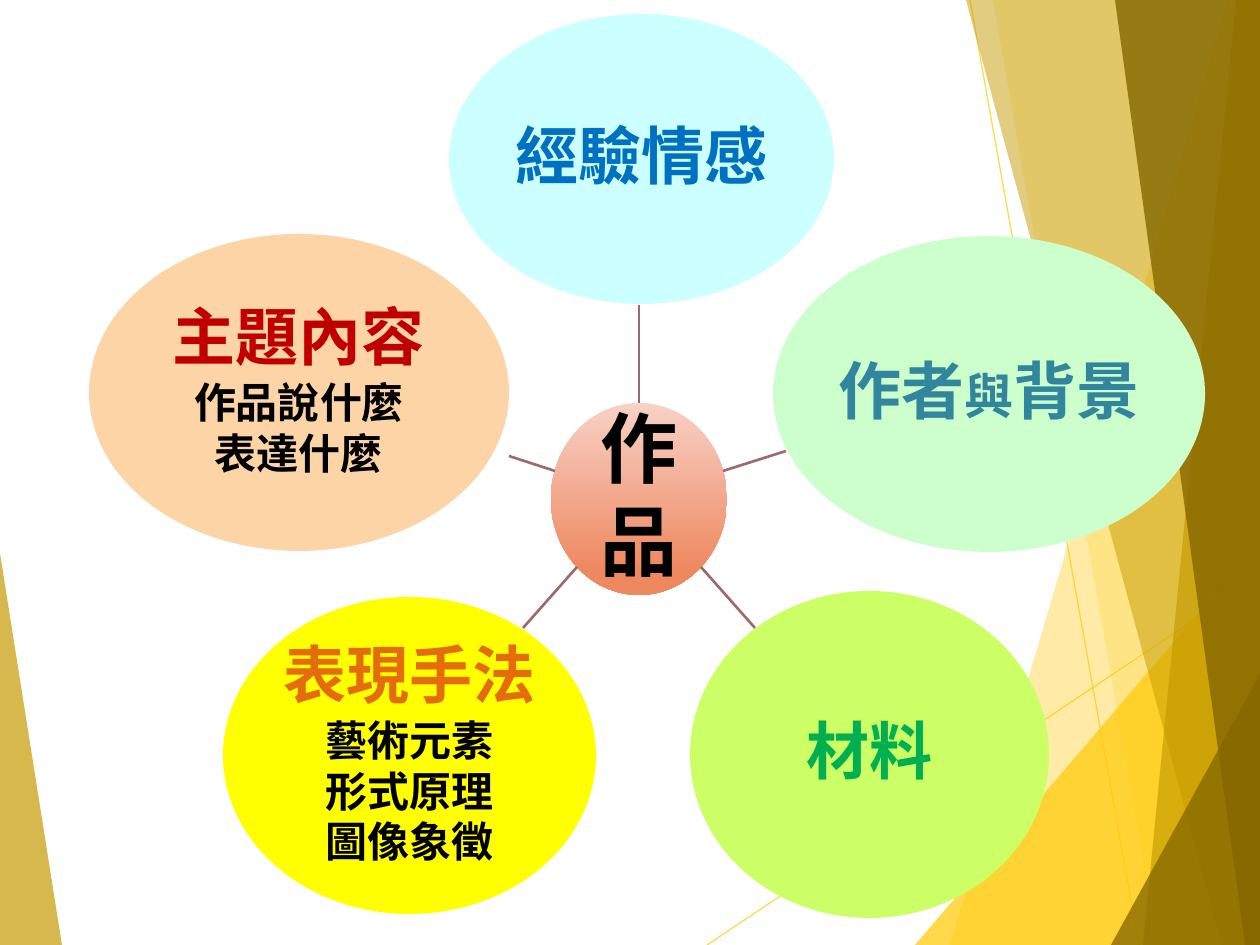
from lxml.etree import SubElement
from pptx import Presentation
from pptx.dml.color import RGBColor
from pptx.enum.shapes import MSO_CONNECTOR, MSO_SHAPE
from pptx.enum.text import MSO_ANCHOR, PP_ALIGN
from pptx.oxml.ns import qn
from pptx.util import Pt

PX = 914400 / 126
WIDTH, HEIGHT = 1260, 945
FONT = "Noto Sans CJK SC"

GOLD = RGBColor(0xFF, 0xCA, 0x08)
OCHRE = RGBColor(0xC5, 0x9B, 0x00)
BROWN = RGBColor(0x84, 0x67, 0x00)
SPOKE = RGBColor(0x9C, 0x6A, 0x6A)
HUB_TOP = RGBColor(0xF8, 0xD1, 0xC6)
HUB_BOTTOM = RGBColor(0xEE, 0x88, 0x5F)
BLACK = RGBColor(0, 0, 0)
CYAN, BLUE = RGBColor(0xCC, 0xFF, 0xFF), RGBColor(0x00, 0x70, 0xC0)
MINT, TEAL = RGBColor(0xCC, 0xFF, 0xCC), RGBColor(0x31, 0x85, 0x9C)
LIME, GREEN = RGBColor(0xCC, 0xFF, 0x66), RGBColor(0x00, 0xB0, 0x50)
YELLOW, ORANGE = RGBColor(0xFF, 0xFF, 0x00), RGBColor(0xE4, 0x6C, 0x0A)
PEACH, RED = RGBColor(0xFC, 0xD4, 0xA5), RGBColor(0xC0, 0x00, 0x00)

# Background facets: outline, colour, opacity in percent
FACETS = [
    ([(1228, 0), (950, 945), (1260, 945), (1260, 0)], GOLD, 36),
    ([(993, 0), (1158, 945), (1260, 945), (1260, 0)], GOLD, 20),
    ([(915, 945), (1260, 541), (1260, 945)], GOLD, 72),
    ([(966, 0), (1222, 945), (1260, 945), (1260, 0)], OCHRE, 50),
    ([(1236, 0), (1143, 945), (1260, 945), (1260, 0)], OCHRE, 66),
    ([(1115, 0), (1245, 945), (1260, 945), (1260, 0)], BROWN, 80),
    ([(1111, 945), (1260, 674), (1260, 945)], BROWN, 76),
    ([(0, 553), (62, 945), (0, 945)], OCHRE, 70),
]
HAIRLINES = [((707, 945), (1260, 576)), ((970, 0), (1139, 945))]

# Topics around the hub: box, fill, heading colour, heading, details
TOPICS = [
    ((449, 14, 385, 290), CYAN, BLUE, [("經驗情感", 36)], []),
    ((773, 236, 432, 316), MINT, TEAL,
     [("作者", 36), ("與", 28), ("背景", 36)], []),
    ((690, 591, 359, 327), LIME, GREEN, [("材料", 36)], []),
    ((223, 597, 373, 317), YELLOW, ORANGE, [("表現手法", 36)],
     ["藝術元素", "形式原理", "圖像象徵"]),
    ((89, 234, 420, 317), PEACH, RED, [("主題內容", 36)],
     ["作品說什麼", "表達什麼"]),
]
SPOKES = [
    ((639, 403), (639, 305)),
    ((723, 471), (786, 451)),
    ((701, 567), (755, 628)),
    ((577, 567), (523, 628)),
    ((555, 471), (509, 456)),
]


def emu(*lengths):
    return [round(length * PX) for length in lengths]


def set_opacity(fill_parent, percent):
    color = fill_parent.find(".//" + qn("a:srgbClr"))
    SubElement(color, qn("a:alpha"), val=str(percent * 1000))


def add_line(page, start, end, color, width):
    line = page.shapes.add_connector(MSO_CONNECTOR.STRAIGHT, *emu(*start, *end))
    line.line.color.rgb = color
    line.line.width = Pt(width)
    SubElement(line._element.spPr, qn("a:effectLst"))
    return line


def add_facet(page, points, color, percent):
    builder = page.shapes.build_freeform(*points[0], scale=PX)
    builder.add_line_segments(points[1:], close=True)
    facet = builder.convert_to_shape()
    facet.shadow.inherit = False
    facet.fill.solid()
    facet.fill.fore_color.rgb = color
    facet.line.fill.background()
    set_opacity(facet._element.spPr, percent)


def add_background(page):
    for start, end in HAIRLINES:
        line = add_line(page, start, end, GOLD, 0.75)
        set_opacity(line._element.spPr, 70)
    for facet in FACETS:
        add_facet(page, *facet)


def add_oval(page, box):
    oval = page.shapes.add_shape(MSO_SHAPE.OVAL, *emu(*box))
    oval.shadow.inherit = False
    oval.line.fill.background()
    frame = oval.text_frame
    frame.word_wrap = True
    frame.vertical_anchor = MSO_ANCHOR.MIDDLE
    frame.margin_left = frame.margin_right = 0
    frame.margin_top = frame.margin_bottom = 0
    return oval


def write_paragraphs(frame, paragraphs):
    """Each paragraph is (spans, colour); each span is (text, size)."""
    for number, (spans, color) in enumerate(paragraphs):
        para = frame.add_paragraph() if number else frame.paragraphs[0]
        para.alignment = PP_ALIGN.CENTER
        para.line_spacing = 0.9
        size = spans[0][1]
        para.space_after = Pt(size / 8)
        font = para.font
        font.size, font.bold, font.name = Pt(size), True, FONT
        font.color.rgb = color
        SubElement(font._element, qn("a:ea"), typeface=FONT)
        for text, span_size in spans:
            span = para.add_run()
            span.text = text
            if span_size != size:
                span.font.size = Pt(span_size)


def add_hub(page, box):
    hub = add_oval(page, box)
    hub.fill.gradient()
    hub.fill.gradient_angle = 270
    stops = zip(hub.fill.gradient_stops, (HUB_TOP, HUB_BOTTOM), (0, 0.88))
    for stop, color, position in stops:
        stop.color.rgb = color
        stop.position = position
    write_paragraphs(hub.text_frame, [([(text, 44)], BLACK) for text in "作品"])


def add_topic(page, box, fill, color, heading, details):
    topic = add_oval(page, box)
    topic.fill.solid()
    topic.fill.fore_color.rgb = fill
    lines = [([(text, 24)], BLACK) for text in details]
    write_paragraphs(topic.text_frame, [(heading, color)] + lines)


def main():
    deck = Presentation()
    deck.slide_width, deck.slide_height = emu(WIDTH, HEIGHT)
    page = deck.slides.add_slide(deck.slide_layouts[6])
    add_background(page)
    add_hub(page, (551, 403, 176, 192))
    for spoke, topic in zip(SPOKES, TOPICS):
        add_line(page, *spoke, SPOKE, 1.5)
        add_topic(page, *topic)
    deck.save("out.pptx")


if __name__ == "__main__":
    main()
